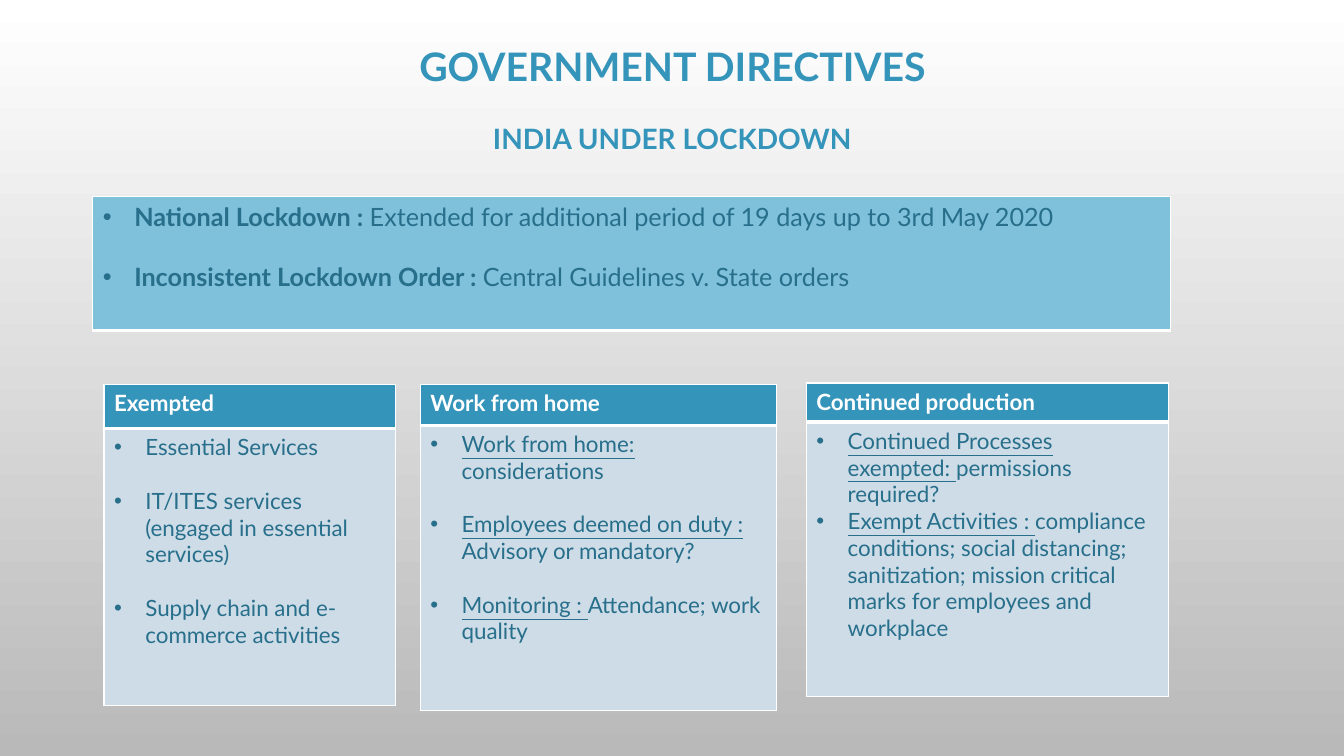
"""Build the slide on government directives during the lockdown."""
from dataclasses import dataclass

from lxml import etree
from pptx import Presentation
from pptx.dml.color import RGBColor
from pptx.enum.text import MSO_ANCHOR as Anchor, PP_ALIGN as Align
from pptx.oxml.ns import qn
from pptx.util import Cm, Pt

BLUE, DEEP, SKY, PALE, WHITE = "3494BA", "276F8B", "7FC1DB", "CEDCE7", "FFFFFF"
LEFT, WIDE = 2.34, 29.21
INDENT = 0.79


@dataclass
class Panel:
    """A one-column table with an optional header row."""
    left: float
    top: float
    width: float
    rows: list[float]
    items: list[tuple[str, str]]
    head: str = ""
    fill: str = PALE
    size: int = 16
    gap: float = 19.2


PANELS = [
    Panel(LEFT, 4.95, 27.15, [3.38], [
        ("National Lockdown : ", "Extended for additional period of 19 days up to 3rd May 2020"),
        ("Inconsistent Lockdown Order : ", "Central Guidelines v. State orders"),
    ], fill=SKY, size=18, gap=21.6),
    Panel(2.62, 9.68, 7.34, [1.12, 6.98], [
        ("", "Essential Services"),
        ("", "IT/ITES services (engaged in essential services)"),
        ("", "Supply chain and e-commerce activities"),
    ], "Exempted"),
    Panel(10.59, 9.68, 8.97, [1.04, 7.19], [
        ("Work from home: ", "considerations"),
        ("Employees deemed on duty : ", "Advisory or mandatory?"),
        ("Monitoring : ", "Attendance; work quality"),
    ], "Work from home"),
    Panel(20.32, 9.65, 9.12, [0.99, 6.91], [
        ("Continued Processes exempted: ", "permissions required?"),
        ("Exempt Activities : ", "compliance conditions; social distancing; sanitization; "
         "mission critical marks for employees and workplace"),
    ], "Continued production", gap=0),
]


def tint(code: str) -> RGBColor:
    """Turn a hex string into a colour."""
    return RGBColor.from_string(code)


def write(para, text: str, size: int = 16, color: str = DEEP,
          bold: bool = False, under: bool = False) -> None:
    """Add one formatted run to a paragraph."""
    run = para.add_run()
    run.text = text
    font = run.font
    font.name, font.size, font.bold = "Lato", Pt(size), bold
    font.color.rgb = tint(color)
    if under:
        font.underline = True


def bullet(para) -> None:
    """Give a paragraph a hanging round bullet."""
    props = para._p.get_or_add_pPr()
    props.set("marL", str(Cm(INDENT)))
    props.set("indent", str(-Cm(INDENT)))
    etree.SubElement(props, qn("a:buFont"), typeface="Arial")
    etree.SubElement(props, qn("a:buChar"), char="•")


def style(cell, color: str, top: int = 1, base: int = 3) -> None:
    """Set the white borders and the fill of a cell."""
    props = cell._tc.get_or_add_tcPr()
    for side, width in zip("LRTB", (1, 1, top, base)):
        line = etree.SubElement(props, qn(f"a:ln{side}"), w=str(Pt(width)))
        fill = etree.SubElement(line, qn("a:solidFill"))
        etree.SubElement(fill, qn("a:srgbClr"), val=WHITE)
    cell.fill.solid()
    cell.fill.fore_color.rgb = tint(color)


def title(slide, text: str, top: float, height: float, size: int,
          pitch: float, anchor: Anchor) -> None:
    """Draw a centred heading."""
    frame = slide.shapes.add_textbox(Cm(LEFT), Cm(top), Cm(WIDE), Cm(height)).text_frame
    frame.word_wrap = True
    frame.vertical_anchor = anchor
    para = frame.paragraphs[0]
    para.alignment, para.line_spacing = Align.CENTER, pitch
    write(para, text, size=size, color=BLUE, bold=True)


def draw(slide, panel: Panel) -> None:
    """Draw a panel as a table."""
    table = slide.shapes.add_table(
        len(panel.rows), 1, Cm(panel.left), Cm(panel.top),
        Cm(panel.width), Cm(sum(panel.rows))).table
    table.first_row = bool(panel.head)
    table.horz_banding = False
    for row, height in zip(table.rows, panel.rows):
        row.height = Cm(height)
    if panel.head:
        head = table.cell(0, 0)
        style(head, BLUE)
        write(head.text_frame.paragraphs[0], panel.head, color=WHITE, bold=True)
    body = table.cell(len(panel.rows) - 1, 0)
    if panel.head:
        style(body, panel.fill, top=3, base=1)
    else:
        style(body, panel.fill)
    frame = body.text_frame
    for num, (lead, rest) in enumerate(panel.items):
        para = frame.add_paragraph() if num else frame.paragraphs[0]
        bullet(para)
        if num and panel.gap:
            para.space_before = Pt(panel.gap)
        if lead:
            write(para, lead, size=panel.size, bold=not panel.head, under=bool(panel.head))
        write(para, rest, size=panel.size)


def main() -> None:
    """Build and save the deck."""
    deck = Presentation()
    deck.slide_width, deck.slide_height = Cm(33.87), Cm(19.05)
    slide = deck.slides.add_slide(deck.slide_layouts[6])
    back = slide.background.fill
    back.gradient()
    back.gradient_angle = 270
    for stop, code in zip(back.gradient_stops, (WHITE, "B9B9B9")):
        stop.color.rgb = tint(code)
    title(slide, "GOVERNMENT DIRECTIVES", 0.69, 2.11, 28, 0.9, Anchor.MIDDLE)
    title(slide, "INDIA UNDER LOCKDOWN", 2.77, 1.5, 20, 1.2, Anchor.TOP)
    for panel in PANELS:
        draw(slide, panel)
    deck.save("out.pptx")


if __name__ == "__main__":
    main()
